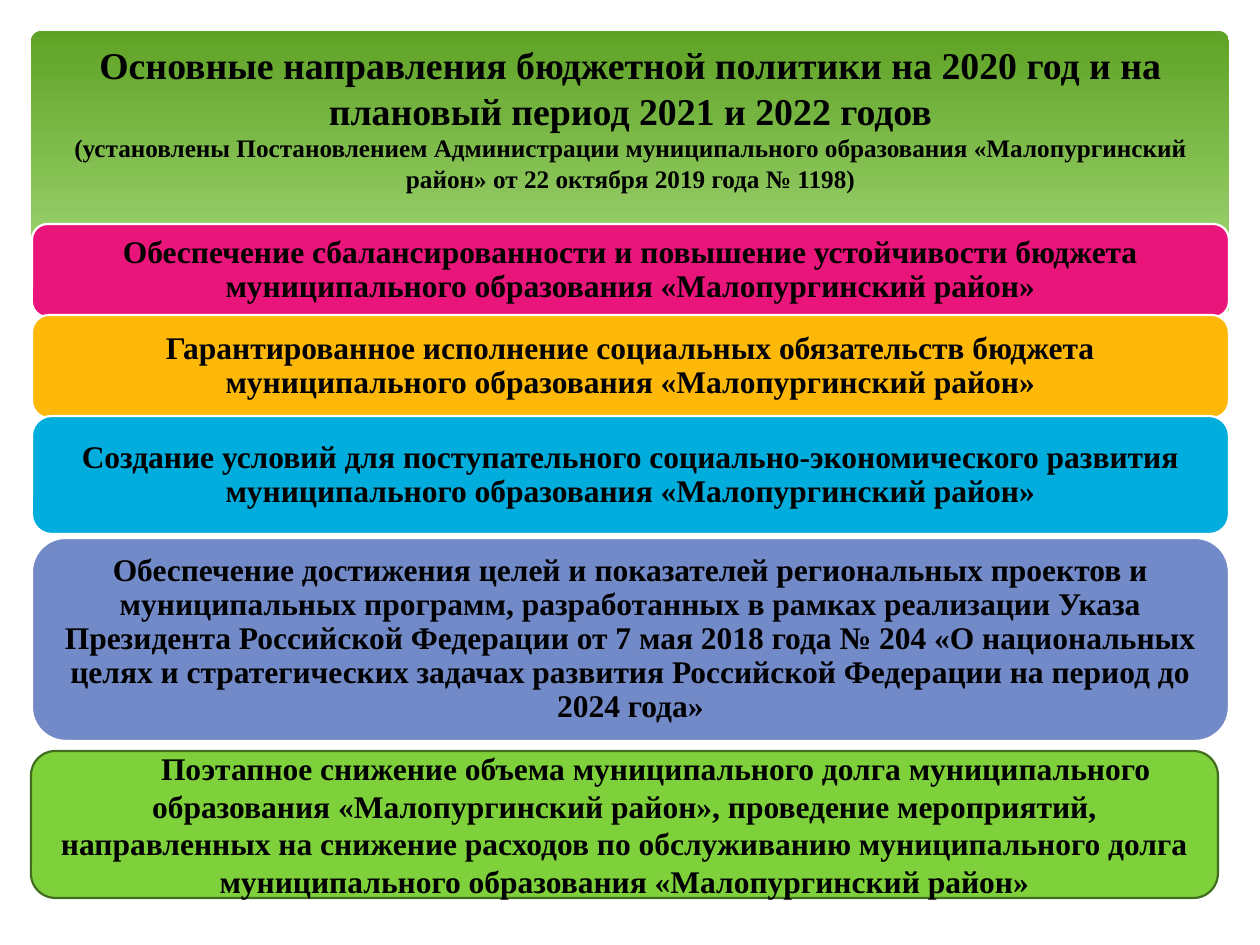
from pptx import Presentation
from pptx.dml.color import RGBColor
from pptx.enum.shapes import MSO_SHAPE as Kind
from pptx.enum.text import MSO_ANCHOR as Anchor, MSO_AUTO_SIZE as Auto, PP_ALIGN as Align
from pptx.util import Pt

PX = 914400 / 126
FONT = "Times New Roman"
LEFT, WIDE = 32, 1197

HEAD = [
    ("Основные направления бюджетной политики на 2020 год и на плановый период 2021 и 2022 годов\n", 21.6),
    ("(установлены Постановлением Администрации муниципального образования "
     "«Малопургинский район» от 22 октября 2019 года № 1198)", 14.4),
]
BARS = [
    (224, 93, "EA157A", "Обеспечение сбалансированности и повышение устойчивости бюджета\n"
     "муниципального образования «Малопургинский район»"),
    (315, 103, "FEB80A", "Гарантированное исполнение социальных обязательств бюджета "
     "муниципального образования «Малопургинский район»"),
    (416, 118, "00ADDC", "Создание условий для поступательного социально-экономического развития "
     "муниципального образования «Малопургинский район»"),
    (538, 203, "738AC8", "Обеспечение достижения целей и показателей региональных проектов и "
     "муниципальных программ, разработанных в рамках реализации Указа Президента Российской "
     "Федерации от 7 мая 2018 года № 204 «О национальных целях и стратегических задачах "
     "развития Российской Федерации на период до 2024 года»"),
]
DEBT = ("Поэтапное снижение объема муниципального долга муниципального образования "
        "«Малопургинский район», проведение мероприятий, направленных на снижение расходов по "
        "обслуживанию муниципального долга муниципального образования «Малопургинский район»")
WAVE = [(29, 268), (58, 255), (107, 243), (166, 234), (243, 232), (341, 237), (460, 254),
        (563, 277), (699, 309), (820, 330), (917, 342), (1019, 349), (1103, 345),
        (1172, 334), (1231, 310), (1231, 415), (29, 415)]


def px(*nums):
    return [round(n * PX) for n in nums]


def tint(code):
    return RGBColor.from_string(code)


def write(shape, runs, gap=1.0, anchor=Anchor.MIDDLE, pads=(13, 6, 13, 6)):
    frame = shape.text_frame
    frame.word_wrap = True
    frame.auto_size = Auto.NONE
    frame.vertical_anchor = anchor
    (frame.margin_left, frame.margin_top,
     frame.margin_right, frame.margin_bottom) = px(*pads)
    para = frame.paragraphs[0]
    para.alignment = Align.CENTER
    para.line_spacing = gap
    for text, size, *face in runs:
        for i, line in enumerate(text.split("\n")):
            if i:
                para.add_line_break()
            if line:
                run = para.add_run()
                run.text = line
                run.font.size = Pt(size)
                run.font.name = face[0] if face else FONT
                run.font.bold = not face
                run.font.color.rgb = tint("000000")


def paint(shape, fill, edge=None):
    shape.shadow.inherit = False
    shape.fill.solid()
    shape.fill.fore_color.rgb = tint(fill)
    if edge:
        shape.line.color.rgb = tint(edge)
        shape.line.width = Pt(1.25)
    else:
        shape.line.fill.background()


def build():
    deck = Presentation()
    deck.slide_width, deck.slide_height = px(1260, 945)
    slide = deck.slides.add_slide(deck.slide_layouts[5])
    shapes = slide.shapes

    panel = shapes.add_shape(Kind.ROUNDED_RECTANGLE, *px(31, 31, 1198, 340))
    panel.adjustments[0] = 0.03
    panel.shadow.inherit = False
    panel.line.fill.background()
    panel.fill.gradient()
    panel.fill.gradient_angle = 270
    for stop, place, code in zip(panel.fill.gradient_stops, (0, 0.9), ("5FA326", "B2E389")):
        stop.position = place
        stop.color.rgb = tint(code)

    pen = shapes.build_freeform(*WAVE[0], scale=PX)
    pen.add_line_segments(WAVE[1:], close=True)
    paint(pen.convert_to_shape(), "FFFFFF")

    for top, high, fill, text in BARS:
        bar = shapes.add_shape(Kind.ROUNDED_RECTANGLE, *px(LEFT, top, WIDE, high))
        paint(bar, fill, "FFFFFF")
        write(bar, [(text, 18)], gap=0.9, pads=(9, 9, 9, 9))

    title = shapes.title
    title.left, title.top, title.width, title.height = px(LEFT, 42, WIDE, 178)
    write(title, HEAD, anchor=Anchor.TOP, pads=(13, 0, 13, 0))
    title.element.getparent().append(title.element)

    debt = shapes.add_shape(Kind.ROUNDED_RECTANGLE, *px(31, 751, 1187, 147))
    paint(debt, "7FD13B", "426D1F")
    write(debt, [("\t", 16, "Cabin"), (DEBT, 18)])

    deck.save("out.pptx")


if __name__ == "__main__":
    build()
